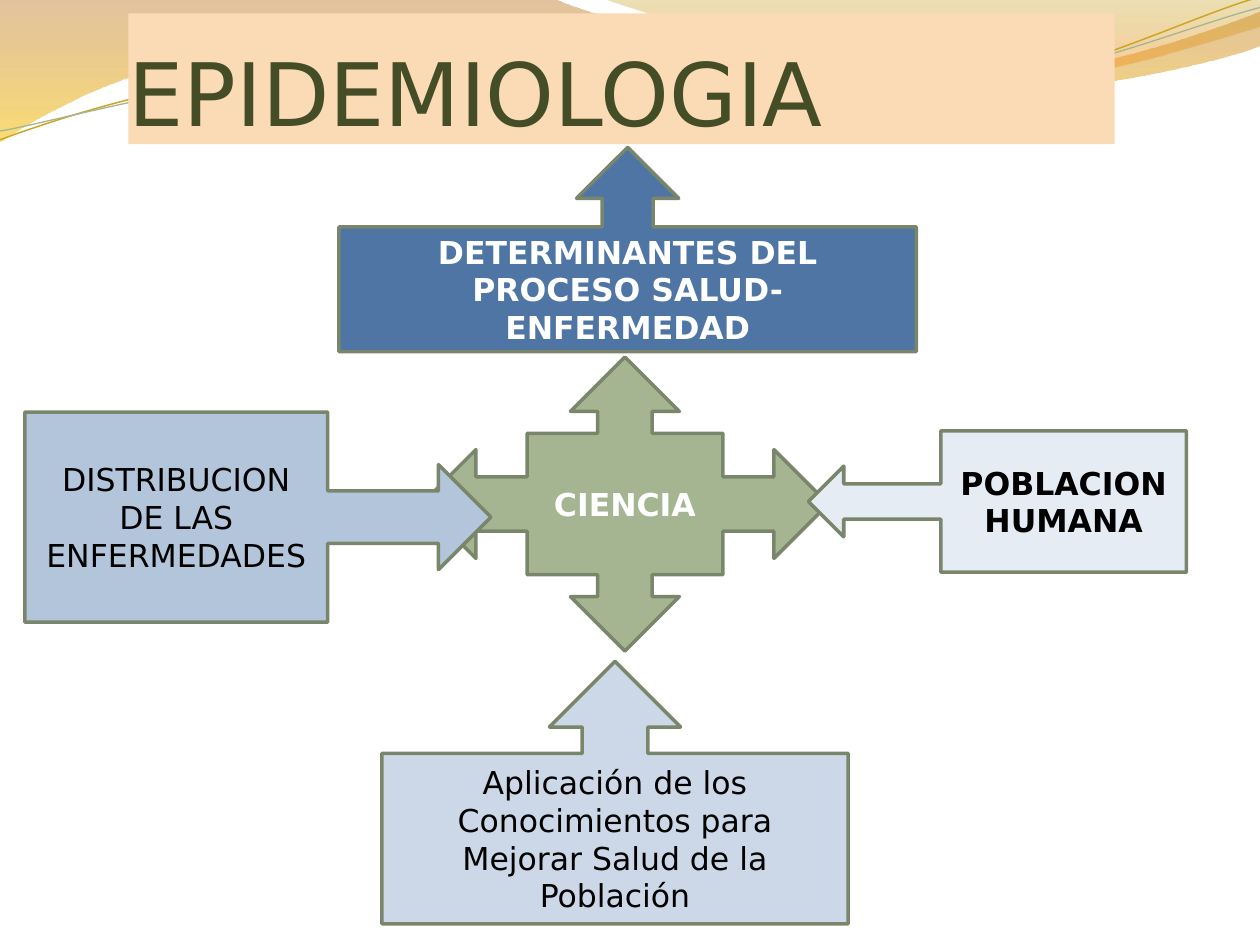
"""Build the EPIDEMIOLOGIA slide: callout arrows around a central concept."""
from lxml.etree import SubElement
from pptx import Presentation
from pptx.dml.color import RGBColor
from pptx.enum.shapes import MSO_SHAPE
from pptx.enum.text import MSO_ANCHOR, MSO_AUTO_SIZE, PP_ALIGN
from pptx.oxml.ns import qn
from pptx.util import Pt

FONT = "DejaVu Sans"


def color(value):
    return RGBColor.from_string(value)


def add_wave(page, start, segments, closed):
    """Draw an outline whose segments are line ends or cubic curve points."""
    ends = [start] + [segment[-2:] for segment in segments]
    left, top = (min(end[axis] for end in ends) for axis in (0, 1))
    builder = page.shapes.build_freeform(start[0] * 100, start[1] * 100, scale=Pt(1) / 100)
    builder.add_line_segments([(x * 100, y * 100) for x, y in ends[1:]], close=closed)
    wave = builder.convert_to_shape()
    wave.shadow.inherit = False
    edges = list(wave._element.spPr.iter(qn("a:lnTo")))
    for edge, segment in zip(edges, segments):
        if len(segment) == 2:
            continue
        curve = SubElement(edge.getparent(), qn("a:cubicBezTo"))
        for x, y in zip(segment[::2], segment[1::2]):
            point = SubElement(curve, qn("a:pt"))
            point.set("x", str(round((x - left) * 100)))
            point.set("y", str(round((y - top) * 100)))
        edge.getparent().replace(edge, curve)
    return wave


deck = Presentation()
deck.slide_width, deck.slide_height = Pt(720), Pt(540)
page = deck.slides.add_slide(deck.slide_layouts[5])
page.background.fill.solid()
page.background.fill.fore_color.rgb = color("FFFFFF")

bands = [
    ((0, 0), [(316.8, -0.7), (342.7, 12.2, 478.1, 45.4, 545.8, 45.4),
              (614.2, 45.4, 689.8, 18.7, 720, 6.5), (720.7, 25.9),
              (707.8, 31.7, 626.4, 54.7, 537.1, 54), (447.8, 54, 275, 20.2, 185, 24.5),
              (92.9, 25.9, 33.1, 59.8, -0.7, 81.4)],
     [(0, "C07A28", 45), (1, "F7BF00", 55)]),
    ((344.9, -0.7), [(366.5, 7.9, 491, 44.6, 553.7, 46.8),
                     (616.3, 49.7, 691.9, 23, 720, 15.1), (720, 0)],
     [(0, "C09709", 30), (0.8, "F59320", 45)]),
]
for start, segments, stops in bands:
    band = add_wave(page, start, segments, True)
    band.line.fill.background()
    band.fill.gradient()
    band.fill.gradient_angle = 270
    for stop, (position, shade, _) in zip(band.fill.gradient_stops, stops):
        stop.position = position
        stop.color.rgb = color(shade)
    for node, (_, _, opacity) in zip(band._element.spPr.iter(qn("a:srgbClr")), stops):
        SubElement(node, qn("a:alpha")).set("val", str(opacity * 1000))

strands = [
    ((-1.4, 62.9), [(33.8, 51.7, 114.1, 29.4, 199.8, 29.9), (284.8, 30.3, 425.9, 67.3, 512.5, 64.8),
                    (599.1, 62.4, 676.5, 25.7, 720.2, 15.6)], "CCA624", 0.85),
    ((-1.1, 57.9), [(32.9, 53.7, 118.3, 32.5, 204.1, 33), (290.5, 33.4, 428.9, 63.8, 515.5, 61.4),
                    (601.4, 59.6, 678.4, 30.1, 721.4, 21.3)], "A5B592", 0.75),
]
for start, segments, shade, width in strands:
    strand = add_wave(page, start, segments, False)
    strand.rotation = 357.3
    strand.fill.background()
    strand.line.color.rgb = color(shade)
    strand.line.width = Pt(width)

title = page.shapes.title
page.shapes._spTree.append(title._element)
title.left, title.top, title.width, title.height = Pt(73.4), Pt(7.7), Pt(563.6), Pt(74.7)
title.fill.solid()
title.fill.fore_color.rgb = color("FADBB5")
frame = title.text_frame
frame.auto_size = MSO_AUTO_SIZE.NONE
frame.vertical_anchor = MSO_ANCHOR.BOTTOM
frame.margin_left = frame.margin_right = frame.margin_bottom = Pt(0)
frame.margin_top = Pt(3.6)
para = frame.paragraphs[0]
para.alignment = PP_ALIGN.LEFT
span = para.add_run()
span.text = "EPIDEMIOLOGIA"
span.font.name, span.font.size = FONT, Pt(50)
span.font.color.rgb = color("444D26")

callouts = [
    (MSO_SHAPE.QUAD_ARROW_CALLOUT, (240.9, 204, 232.5, 168), "A5B592", "FFFFFF", True,
     "CIENCIA"),
    (MSO_SHAPE.LEFT_ARROW_CALLOUT, (462, 246.2, 216, 80.8), "E6ECF3", "000000", True,
     "POBLACION HUMANA"),
    (MSO_SHAPE.UP_ARROW_CALLOUT, (218.2, 378, 266.5, 149.9), "CCD8E7", "000000", False,
     "Aplicación de los Conocimientos para Mejorar Salud de la Población"),
    (MSO_SHAPE.RIGHT_ARROW_CALLOUT, (14.2, 235.5, 266.4, 120), "B3C5DA", "000000", False,
     "DISTRIBUCION DE LAS ENFERMEDADES"),
    (MSO_SHAPE.UP_ARROW_CALLOUT, (193.7, 84.2, 330, 116.7), "4E75A3", "FFFFFF", True,
     "DETERMINANTES DEL PROCESO SALUD-ENFERMEDAD"),
]
for kind, place, fill, ink, bold, text in callouts:
    box = page.shapes.add_shape(kind, *map(Pt, place))
    box.shadow.inherit = False
    box.fill.solid()
    box.fill.fore_color.rgb = color(fill)
    box.line.color.rgb = color("7A866C")
    box.line.width = Pt(2)
    box.text_frame.word_wrap = True
    box.text_frame.vertical_anchor = MSO_ANCHOR.MIDDLE
    para = box.text_frame.paragraphs[0]
    para.alignment = PP_ALIGN.CENTER
    span = para.add_run()
    span.text = text
    span.font.name, span.font.size, span.font.bold = FONT, Pt(18), bold
    span.font.color.rgb = color(ink)
box.adjustments[3] = 0.61

deck.save("out.pptx")
